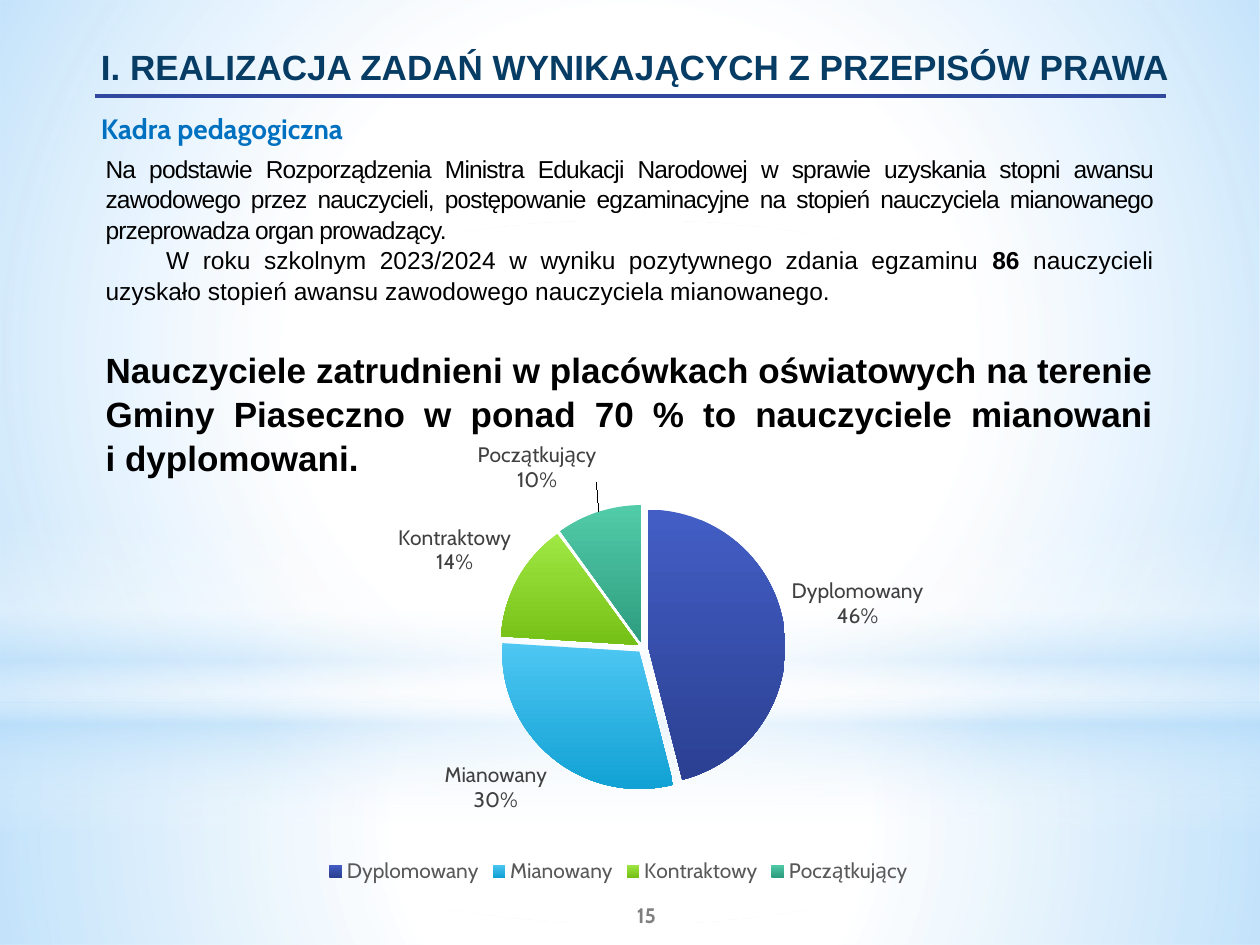
from copy import deepcopy
from dataclasses import dataclass

from lxml import etree
from pptx import Presentation
from pptx.chart.data import CategoryChartData
from pptx.dml.color import RGBColor
from pptx.enum.chart import XL_CHART_TYPE as ChartType
from pptx.enum.chart import XL_LABEL_POSITION as LabelPos
from pptx.enum.chart import XL_LEGEND_POSITION as LegendPos
from pptx.enum.shapes import MSO_CONNECTOR as Connector
from pptx.enum.shapes import MSO_SHAPE as Shape
from pptx.enum.text import MSO_ANCHOR as Anchor
from pptx.enum.text import MSO_AUTO_SIZE as AutoSize
from pptx.enum.text import PP_ALIGN as Align
from pptx.oxml import parse_xml
from pptx.oxml.ns import nsdecls, qn
from pptx.util import Cm, Pt


@dataclass(frozen=True)
class Theme:
    sans: str = "Arial"
    accent_font: str = "Cabin"
    heading: str = "073C65"
    subheading: str = "0070C0"
    rule: str = "31489F"
    text: str = "000000"
    number: str = "7F7F7F"
    label: str = "404040"
    legend: str = "595959"
    white: str = "FFFFFF"
    sky: str = "B4DCFA"
    slices: tuple = (("435EC5", "2B4092"), ("4EC7F2", "11A1D4"),
                     ("A0E844", "75C016"), ("52CBA9", "2E9D7F"))
    large: int = 20
    medium: int = 16
    body: int = 14
    small: int = 12


class SlideBuilder:
    def __init__(self, slide, theme):
        self.slide = slide
        self.theme = theme

    def style(self, font, face, size, color, bold=False):
        font.name, font.size, font.bold = face, Pt(size), bold
        font.color.rgb = RGBColor.from_string(color)

    def run(self, paragraph, text, face, size, color, bold=False):
        run = paragraph.add_run()
        run.text = text
        self.style(run.font, face, size, color, bold)
        return run

    def gradient(self, fill, stops, radial=False):
        """Stops are (position %, colour, opacity %)."""
        fill.gradient()
        grad = fill._fill._gradFill
        for child in list(grad):
            grad.remove(child)
        stop_list = etree.SubElement(grad, qn("a:gsLst"))
        for position, color, opacity in stops:
            stop = etree.SubElement(stop_list, qn("a:gs"), pos=str(position * 1000))
            rgb = etree.SubElement(stop, qn("a:srgbClr"), val=color)
            if opacity < 100:
                etree.SubElement(rgb, qn("a:alpha"), val=str(opacity * 1000))
        if radial:
            path = etree.SubElement(grad, qn("a:path"), path="circle")
            etree.SubElement(path, qn("a:fillToRect"),
                             dict.fromkeys("ltrb", "50000"))
        else:
            etree.SubElement(grad, qn("a:lin"), ang="5400000", scaled="0")

    def glow(self, kind, top, height, stops, radial=True):
        shape = self.slide.shapes.add_shape(kind, 0, Cm(top), Cm(25.4), Cm(height))
        shape.shadow.inherit = False
        shape.line.fill.background()
        self.gradient(shape.fill, stops, radial)

    def title(self, left, top, width, height):
        title = self.slide.shapes.title
        self.slide.shapes._spTree.append(title._element)  # above the backdrop
        title.left, title.top = Cm(left), Cm(top)
        title.width, title.height = Cm(width), Cm(height)
        frame = title.text_frame
        frame.auto_size, frame.vertical_anchor = AutoSize.NONE, Anchor.TOP
        frame.margin_top = Cm(0.2)
        return frame

    def text_box(self, left, top, width, height, anchor=Anchor.TOP):
        box = self.slide.shapes.add_textbox(Cm(left), Cm(top), Cm(width), Cm(height))
        frame = box.text_frame
        frame.word_wrap, frame.vertical_anchor = True, anchor
        return frame

    def rule(self, left, right, y):
        line = self.slide.shapes.add_connector(
            Connector.STRAIGHT, Cm(left), Cm(y), Cm(right), Cm(y))
        line.line.color.rgb = RGBColor.from_string(self.theme.rule)
        line.line.width = Pt(2.25)
        etree.SubElement(line._element.spPr, qn("a:effectLst"))

    def pie(self, left, top, width, height, shares, plot_area):
        theme = self.theme
        data = CategoryChartData(number_format="0")
        data.categories = list(shares)
        data.add_series("Series 1", list(shares.values()))
        chart = self.slide.shapes.add_chart(
            ChartType.PIE, Cm(left), Cm(top), Cm(width), Cm(height), data).chart
        chart.has_title = False
        self.style(chart.font, theme.accent_font, 10, theme.text)
        chart.has_legend = True
        chart.legend.position = LegendPos.BOTTOM
        chart.legend.include_in_layout = False
        self.style(chart.legend.font, theme.accent_font, theme.small, theme.legend)

        # Slices
        plot = chart.plots[0]
        plot.vary_by_categories = True
        series = plot.series[0]
        for index, (light, dark) in enumerate(theme.slices):
            self.gradient(series.points[index].format.fill,
                          [(0, light, 100), (100, dark, 100)])
        series._element.find(qn("c:dPt")).addprevious(
            parse_xml(f'<c:explosion {nsdecls("c")} val="4"/>'))

        # Labels, the last one raised by a line
        labels = series.data_labels
        self.style(labels.font, theme.accent_font, theme.small, theme.label)
        labels.number_format, labels.number_format_is_linked = "0%", False
        labels.position = LabelPos.OUTSIDE_END
        labels.show_value = False
        labels.show_category_name = labels.show_percentage = True
        group = labels._element
        separator = parse_xml(f'<c:separator {nsdecls("c")}>\n</c:separator>')
        group.find(qn("c:showBubbleSize")).addnext(separator)
        raised = parse_xml(
            f'<c:dLbl {nsdecls("c")}><c:idx val="{len(shares) - 1}"/><c:layout>'
            '<c:manualLayout><c:x val="0"/><c:y val="-0.05"/>'
            '</c:manualLayout></c:layout></c:dLbl>')
        for part in group:
            if part.tag != qn("c:showLeaderLines"):
                raised.append(deepcopy(part))
        group.insert(0, raised)

        # Plot area
        area = chart._chartSpace.chart.plotArea
        for layout in area.findall(qn("c:layout")):
            area.remove(layout)
        bounds = "".join(f'<c:{key} val="{value}"/>'
                         for key, value in zip("xywh", plot_area))
        area.insert(0, parse_xml(
            f'<c:layout {nsdecls("c")}><c:manualLayout><c:layoutTarget val="inner"/>'
            '<c:xMode val="edge"/><c:yMode val="edge"/>'
            f'{bounds}</c:manualLayout></c:layout>'))


def main():
    deck = Presentation()
    deck.slide_width, deck.slide_height = Cm(25.4), Cm(19.05)
    theme = Theme()
    page = SlideBuilder(deck.slides.add_slide(deck.slide_layouts[5]), theme)
    white, sky = theme.white, theme.sky

    # Backdrop
    page.glow(Shape.RECTANGLE, 14.17, 4.88, [(0, white, 91), (37, white, 76), (100, sky, 79)])
    page.glow(Shape.RECTANGLE, 0, 14.17, [(0, white, 89), (48, white, 62), (100, sky, 79)])
    page.glow(Shape.RECTANGLE, 10.46, 6.35,
              [(0, white, 0), (29, white, 30), (45, sky, 40),
               (55, white, 26), (65, sky, 60), (100, white, 0)], radial=False)
    page.glow(Shape.OVAL, 4.45, 14.17, [(0, white, 100), (56, white, 0)])

    # Page number
    number = page.text_box(10.49, 17.93, 5.08, 1.02, Anchor.MIDDLE).paragraphs[0]
    number.alignment = Align.CENTER
    page.run(number, "15", theme.accent_font, theme.small, theme.number, True)

    # Title and subheading
    title = page.title(1.27, 0.71, 22.86, 2.21)
    heading, subheading = title.paragraphs[0], title.add_paragraph()
    for paragraph in (heading, subheading):
        paragraph.alignment = Align.LEFT
        paragraph._p.get_or_add_pPr().set("marL", str(Cm(0.51)))
    subheading.space_before = Pt(14)
    page.run(heading, "I. REALIZACJA ZADAŃ WYNIKAJĄCYCH Z PRZEPISÓW PRAWA",
             theme.sans, theme.large, theme.heading, True)
    page.run(subheading, "Kadra pedagogiczna",
             theme.accent_font, theme.medium, theme.subheading, True)
    page.rule(1.91, 23.5, 1.93)

    # Body text
    body = page.text_box(1.88, 2.95, 21.62, 6.68)
    basis, result, summary = body.paragraphs[0], body.add_paragraph(), body.add_paragraph()
    for paragraph in (basis, result, summary):
        paragraph.alignment, paragraph.line_spacing = Align.JUSTIFY, 1.04
    plain = (theme.sans, theme.body, theme.text)
    strong = (theme.sans, theme.large, theme.text, True)
    legal = page.run(
        basis, "Na podstawie Rozporządzenia Ministra Edukacji Narodowej w sprawie uzyskania "
        "stopni awansu zawodowego przez nauczycieli, postępowanie egzaminacyjne na stopień "
        "nauczyciela mianowanego przeprowadza organ prowadzący.", *plain)
    legal.font._element.set("spc", "-50")
    result._p.get_or_add_pPr().set("indent", str(Cm(1.22)))
    page.run(result, "W roku szkolnym 2023/2024 w wyniku pozytywnego zdania egzaminu ", *plain)
    page.run(result, "86", *plain, True)
    page.run(result, " nauczycieli uzyskało stopień awansu zawodowego nauczyciela "
             "mianowanego.", *plain)
    summary.space_before = Pt(24)
    page.run(summary, "Nauczyciele zatrudnieni w placówkach oświatowych na terenie Gminy "
             "Piaseczno w ponad 70 % to nauczyciele mianowani", *strong)
    summary.add_line_break()
    page.run(summary, "i dyplomowani.", *strong)

    # Teachers by rank
    page.pie(2.69, 8.92, 19.56, 8.99,
             {"Dyplomowany": 46, "Mianowany": 30, "Kontraktowy": 14, "Początkujący": 10},
             (0.06, 0.14, 0.93, 0.64))

    deck.save("out.pptx")


if __name__ == "__main__":
    main()
